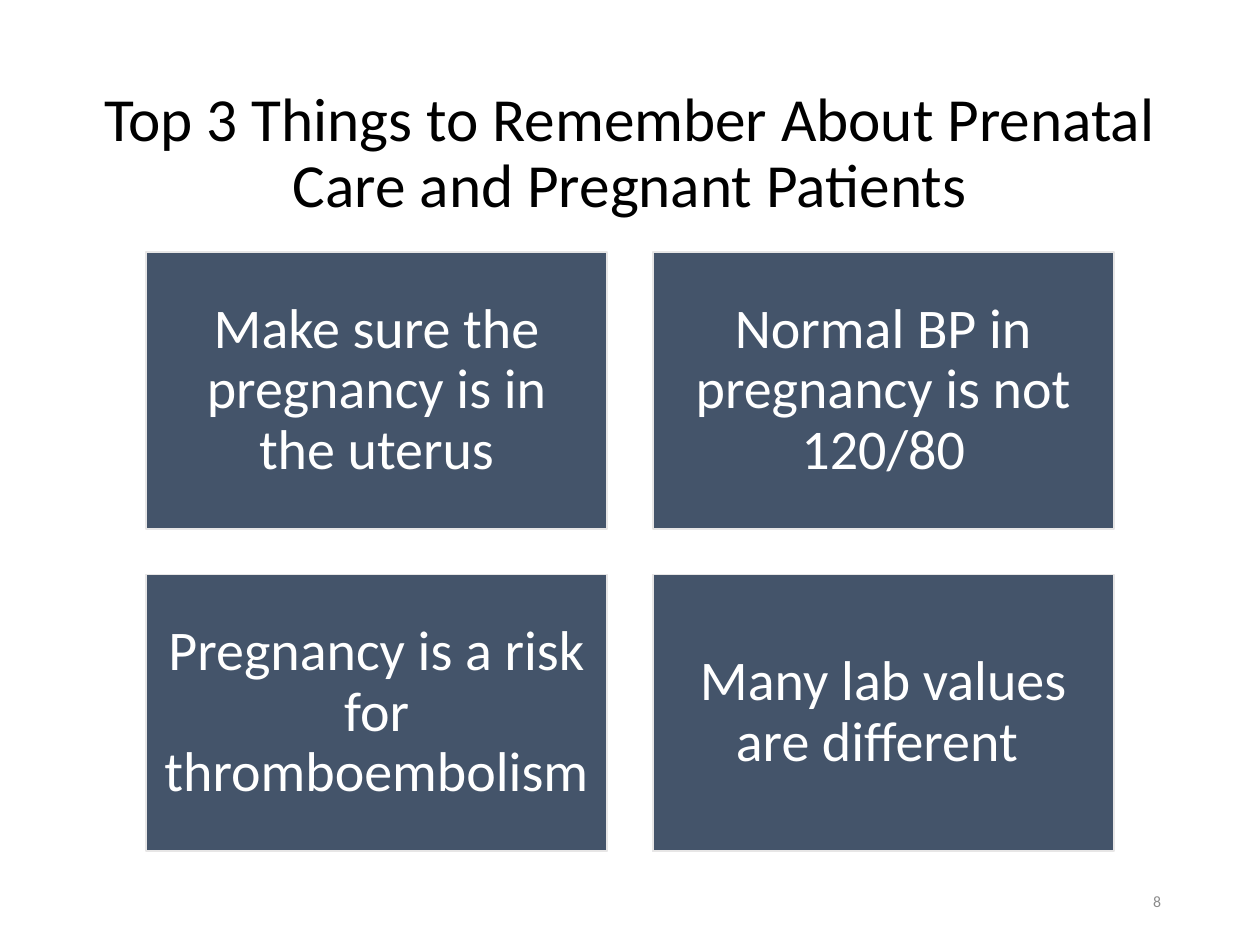
from dataclasses import dataclass

from pptx import Presentation
from pptx.dml.color import RGBColor
from pptx.enum.shapes import MSO_SHAPE
from pptx.enum.text import MSO_ANCHOR, PP_ALIGN
from pptx.util import Pt

RECTANGLE = MSO_SHAPE.RECTANGLE
MIDDLE = MSO_ANCHOR.MIDDLE
CENTER = PP_ALIGN.CENTER
RIGHT = PP_ALIGN.RIGHT


@dataclass(frozen=True)
class Theme:
    """Colours, font and type sizes of the slide."""
    font: str = "Calibri"
    title_color: RGBColor = RGBColor(0x00, 0x00, 0x00)
    number_color: RGBColor = RGBColor(0x8C, 0x8C, 0x8C)
    card_fill: RGBColor = RGBColor(0x44, 0x54, 0x6A)
    card_line: RGBColor = RGBColor(0xE7, 0xE6, 0xE6)
    card_text: RGBColor = RGBColor(0xFF, 0xFF, 0xFF)
    title_size: int = 35
    card_size: int = 32
    number_size: int = 9


@dataclass(frozen=True)
class Box:
    """A rectangle on the slide, in points."""
    left: float
    top: float
    width: float
    height: float

    def lengths(self):
        """Return left, top, width and height as lengths."""
        return Pt(self.left), Pt(self.top), Pt(self.width), Pt(self.height)


THEME = Theme()
REMINDERS = [
    "Make sure the pregnancy is in the uterus",
    "Normal BP in pregnancy is not 120/80",
    "Pregnancy is a risk for thromboembolism",
    "Many lab values are different ",
]


def write_text(shape, text, size, color, alignment, line_spacing=1.0):
    """Write one vertically centred paragraph into a shape."""
    frame = shape.text_frame
    frame.word_wrap = True
    frame.vertical_anchor = MIDDLE
    paragraph = frame.paragraphs[0]
    paragraph.alignment = alignment
    paragraph.line_spacing = line_spacing
    run = paragraph.add_run()
    run.text = text
    run.font.name = THEME.font
    run.font.size = Pt(size)
    run.font.color.rgb = color


def add_title(slide, box, text):
    """Place the slide title."""
    shape = slide.shapes.add_textbox(*box.lengths())
    write_text(shape, text, THEME.title_size, THEME.title_color, CENTER, 0.9)


def add_card(slide, box, text):
    """Place one filled card with its reminder."""
    shape = slide.shapes.add_shape(RECTANGLE, *box.lengths())
    shape.shadow.inherit = False
    shape.fill.solid()
    shape.fill.fore_color.rgb = THEME.card_fill
    shape.line.color.rgb = THEME.card_line
    shape.line.width = Pt(1)
    frame = shape.text_frame
    frame.margin_left = frame.margin_right = Pt(9.6)
    frame.margin_top = frame.margin_bottom = Pt(9.6)
    write_text(shape, text, THEME.card_size, THEME.card_text, CENTER, 0.9)


def add_card_grid(slide, box, texts, columns=2, gap=26):
    """Lay the cards out row by row with equal gaps."""
    rows = -(-len(texts) // columns)
    width = (box.width - gap * (columns - 1)) / columns
    height = (box.height - gap * (rows - 1)) / rows
    for index, text in enumerate(texts):
        row, column = divmod(index, columns)
        left = box.left + column * (width + gap)
        top = box.top + row * (height + gap)
        add_card(slide, Box(left, top, width, height), text)


def add_slide_number(slide, box, number):
    """Place the slide number."""
    shape = slide.shapes.add_textbox(*box.lengths())
    write_text(shape, number, THEME.number_size, THEME.number_color, RIGHT)


def main():
    """Build and save the presentation."""
    presentation = Presentation()
    presentation.slide_width = Pt(720)
    presentation.slide_height = Pt(540)
    slide = presentation.slides.add_slide(presentation.slide_layouts[6])
    add_title(slide, Box(49.5, 44, 621, 89),
              "Top 3 Things to Remember About Prenatal Care and Pregnant Patients")
    add_slide_number(slide, Box(508.5, 500.5, 162, 28.75), "8")
    add_card_grid(slide, Box(83.5, 144, 553, 342.5), REMINDERS)
    presentation.save("out.pptx")


if __name__ == "__main__":
    main()
